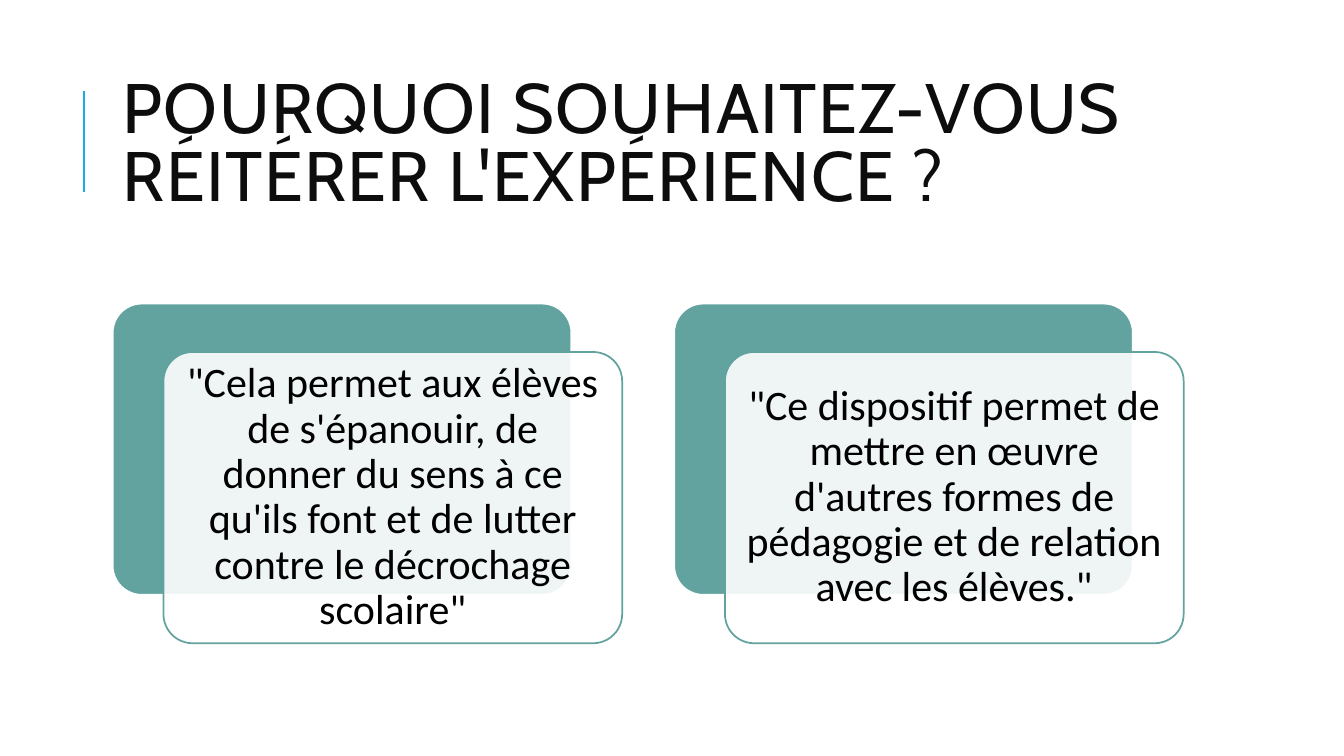
from lxml.etree import SubElement
from pptx import Presentation
from pptx.dml.color import RGBColor
from pptx.enum.shapes import MSO_CONNECTOR, MSO_SHAPE
from pptx.enum.text import MSO_ANCHOR, PP_ALIGN
from pptx.oxml.ns import qn
from pptx.util import Cm, Pt

BLUE = RGBColor(0x1C, 0xAD, 0xE4)
TEAL = RGBColor(0x62, 0xA3, 0x9F)
WHITE = RGBColor(0xFF, 0xFF, 0xFF)
BLACK = RGBColor(0x00, 0x00, 0x00)
NEAR_BLACK = RGBColor(0x0D, 0x0D, 0x0D)

TITLE = "POURQUOI SOUHAITEZ-VOUS RÉITÉRER L'EXPÉRIENCE ?"
QUOTES = [
    "\"Cela permet aux élèves de s'épanouir, de donner du sens à ce qu'ils font "
    "et de lutter contre le décrochage scolaire\"",
    "\"Ce dispositif permet de mettre en œuvre d'autres formes de pédagogie "
    "et de relation avec les élèves.\"",
]
CARD_LEFT, CARD_TOP, CARD_STEP = Cm(2.84), Cm(7.65), Cm(14.15)
CARD_WIDTH, CARD_HEIGHT = Cm(11.56), Cm(7.34)
OFFSET_X, OFFSET_Y = Cm(1.28), Cm(1.22)


def write_text(shape, text, font_name, size, color, line_spacing):
    """Fill a shape with one wrapped, vertically centred paragraph and return it."""
    text_frame = shape.text_frame
    text_frame.text = text
    text_frame.word_wrap = True
    text_frame.vertical_anchor = MSO_ANCHOR.MIDDLE
    paragraph = text_frame.paragraphs[0]
    paragraph.line_spacing = line_spacing
    font = paragraph.runs[0].font
    font.name, font.size = font_name, Pt(size)
    font.color.rgb = color
    return paragraph


def add_accent_line(slide):
    """Draw the vertical line beside the title."""
    line = slide.shapes.add_connector(
        MSO_CONNECTOR.STRAIGHT, Cm(2.11), Cm(4.83), Cm(2.11), Cm(2.29))
    line.line.color.rgb = BLUE
    line.line.width = Pt(1.5)
    SubElement(line._element.spPr, qn("a:effectLst"))


def add_title(slide):
    """Add the title with slightly widened letter spacing."""
    title = slide.shapes.add_textbox(Cm(2.84), Cm(1.63), Cm(27), Cm(4.17))
    paragraph = write_text(title, TITLE, "Cabin", 50, NEAR_BLACK, 0.8)
    paragraph.runs[0].font._element.set("spc", "100")


def add_panel(slide, left, top, fill, outline):
    """Add one rounded rectangle of card size."""
    panel = slide.shapes.add_shape(
        MSO_SHAPE.ROUNDED_RECTANGLE, left, top, CARD_WIDTH, CARD_HEIGHT)
    panel.adjustments[0] = 0.1
    panel.shadow.inherit = False
    panel.fill.solid()
    panel.fill.fore_color.rgb = fill
    panel.line.color.rgb = outline
    panel.line.width = Pt(1.25)
    return panel


def set_opacity(shape, percent):
    """Make the solid fill of a shape partly transparent."""
    color = shape._element.spPr.find(qn("a:solidFill"))[0]
    SubElement(color, qn("a:alpha"), val=str(percent * 1000))


def add_quote_card(slide, left, quote):
    """Add a teal panel with a translucent quote panel shifted over it."""
    add_panel(slide, left, CARD_TOP, TEAL, WHITE)
    front = add_panel(slide, left + OFFSET_X, CARD_TOP + OFFSET_Y, WHITE, TEAL)
    set_opacity(front, 90)
    paragraph = write_text(front, quote, "Calibri", 30, BLACK, 0.9)
    paragraph.alignment = PP_ALIGN.CENTER
    text_frame = front.text_frame
    text_frame.margin_left = text_frame.margin_right = Cm(0.3)
    text_frame.margin_top = text_frame.margin_bottom = Cm(0.3)


def main():
    """Build and save the slide."""
    presentation = Presentation()
    presentation.slide_width, presentation.slide_height = Cm(33.87), Cm(19.05)
    slide = presentation.slides.add_slide(presentation.slide_layouts[6])
    add_accent_line(slide)
    add_title(slide)
    for index, quote in enumerate(QUOTES):
        add_quote_card(slide, CARD_LEFT + index * CARD_STEP, quote)
    presentation.save("out.pptx")


if __name__ == "__main__":
    main()
